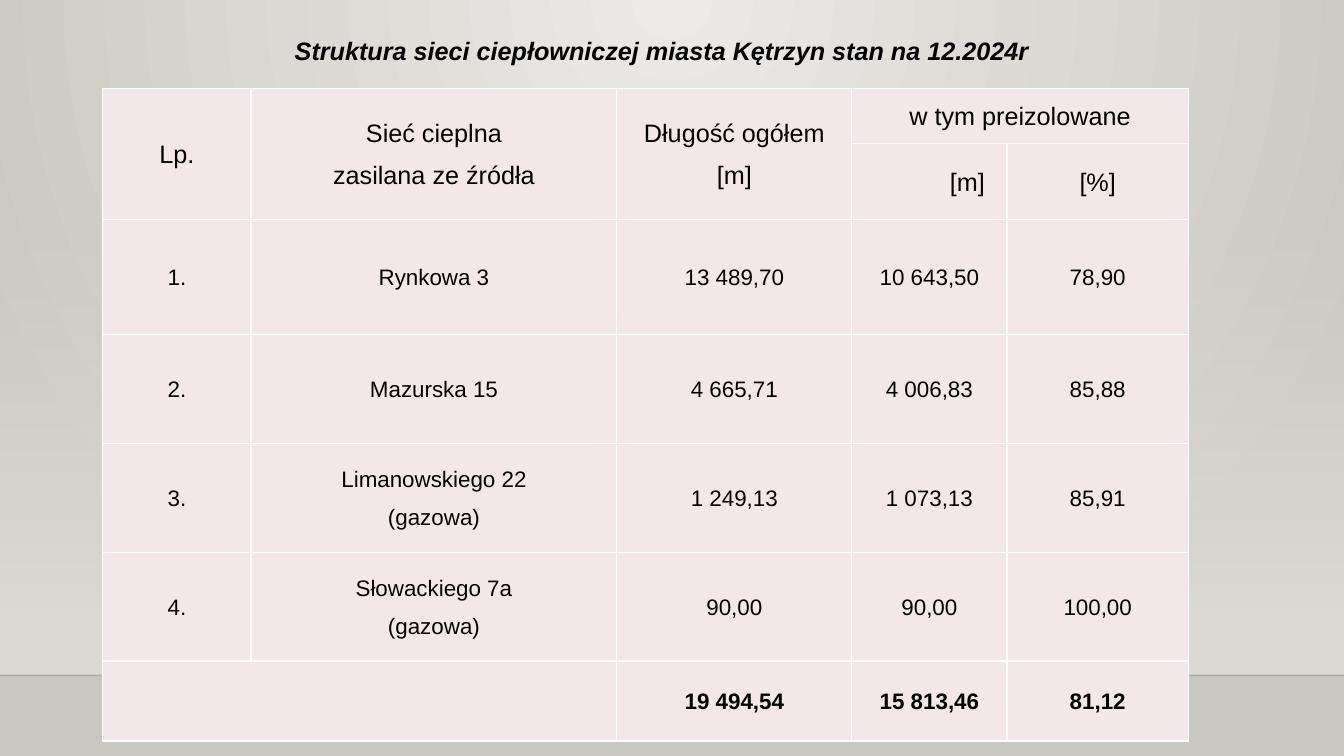
from lxml import etree
from pptx import Presentation
from pptx import util as u
from pptx.dml.color import RGBColor
from pptx.enum import shapes, text
from pptx.oxml import parse_xml
from pptx.oxml.ns import nsdecls, qn

BLACK = RGBColor(0, 0, 0)
WHITE = RGBColor(255, 255, 255)
ROSE = RGBColor(0xF3, 0xE8, 0xE9)
PEARL = RGBColor(0xEC, 0xEA, 0xE7)
STONE = RGBColor(0xCA, 0xC7, 0xC1)
SAND = RGBColor(0xDF, 0xDB, 0xD5)

MID = text.PP_ALIGN.CENTER
CELL = dict(margin_left=u.Inches(0.04), margin_right=u.Inches(0.04),
            margin_top=0, margin_bottom=0, vertical_anchor=text.MSO_ANCHOR.MIDDLE)
PARA = dict(alignment=MID, line_spacing=1.07, space_after=u.Pt(8))
HEAD = dict(name="Arial", size=u.Pt(18), bold=False)
BODY = dict(HEAD, size=u.Pt(16))
TOTAL = dict(BODY, bold=True)
TITLE = dict(HEAD, bold=True, italic=True)

# Shares of the slide's width and height, in percent
COLS = [11.03, 27.22, 17.48, 11.55, 13.5]
ROWS = [7.28, 10.05, 15.21, 14.4, 14.4, 14.4, 10.58]
MERGES = [(0, 0, 1, 0), (0, 1, 1, 1), (0, 2, 1, 2), (0, 3, 0, 4), (6, 0, 6, 1)]
FLOOR = 89.33

NETWORK = [
    ["Lp.", "Sieć cieplna\nzasilana ze źródła", "Długość ogółem\n[m]", "w tym preizolowane", ""],
    ["", "", "", "[m]", "[%]"],
    ["1.", "Rynkowa 3", "13 489,70", "10 643,50", "78,90"],
    ["2.", "Mazurska 15", "4 665,71", "4 006,83", "85,88"],
    ["3.", "Limanowskiego 22\n(gazowa)", "1 249,13", "1 073,13", "85,91"],
    ["4.", "Słowackiego 7a\n(gazowa)", "90,00", "90,00", "100,00"],
    ["", "", "19 494,54", "15 813,46", "81,12"],
]


def apply(item, style):
    for key, value in style.items():
        setattr(item, key, value)


def fade(color, share):
    """Set the opacity of a colour element, in percent."""
    etree.SubElement(color, qn("a:alpha"), val=str(share * 1000))


def blend(fill, first, last):
    fill.gradient()
    for stop, color in zip(fill.gradient_stops, (first, last)):
        stop.color.rgb = color


class Deck:
    def __init__(self):
        self.prs = Presentation()
        self.prs.slide_width, self.prs.slide_height = u.Inches(13.33), u.Inches(7.5)
        self.slide = self.prs.slides.add_slide(self.prs.slide_layouts[5])
        self.shapes = self.slide.shapes

    def wide(self, share):
        return round(self.prs.slide_width * share / 100)

    def high(self, share):
        return round(self.prs.slide_height * share / 100)

    def box(self, x, y, w, h):
        return self.wide(x), self.high(y), self.wide(w), self.high(h)

    def label(self, frame, words, font, para=PARA):
        frame.text = words
        for line in frame.paragraphs:
            apply(line, para)
            apply(line.font, font)
            line.font.color.rgb = BLACK

    def backdrop(self):
        """Radial glow that spreads from the top centre."""
        fill = self.slide.background.fill
        blend(fill, PEARL, STONE)
        lin = self.slide.element.find(".//" + qn("a:lin"))
        lin.getparent().replace(lin, parse_xml(
            f'<a:path {nsdecls("a")} path="circle">'
            '<a:fillToRect l="43000" t="0" r="43000" b="100000"/></a:path>'))

    def wall(self, *place):
        """Haze that thickens down to the floor."""
        wall = self.shapes.add_shape(shapes.MSO_SHAPE.RECTANGLE, *self.box(*place))
        wall.shadow.inherit = False
        wall.line.fill.background()
        blend(wall.fill, SAND, SAND)
        wall.fill.gradient_angle = 270
        fade(wall.element.find(".//" + qn("a:srgbClr")), 0)

    def rule(self, y):
        edge = self.high(y)
        line = self.shapes.add_connector(
            shapes.MSO_CONNECTOR.STRAIGHT, 0, edge, self.prs.slide_width, edge)
        line.line.width = u.Pt(1)
        line.line.color.rgb = BLACK
        fade(line.element.find(".//" + qn("a:srgbClr")), 20)
        etree.SubElement(line.element.spPr, qn("a:effectLst"))

    def title(self, words, *place):
        title = self.shapes.title
        apply(title, dict(zip(("left", "top", "width", "height"), self.box(*place))))
        frame = title.text_frame
        self.label(frame, words, TITLE, dict(alignment=MID))
        apply(frame, dict(word_wrap=True, auto_size=text.MSO_AUTO_SIZE.NONE,
                          vertical_anchor=text.MSO_ANCHOR.MIDDLE))

    def border(self, cell):
        for side in "LRTB":
            cell._tc.get_or_add_tcPr().append(parse_xml(
                f'<a:ln{side} {nsdecls("a")} w="{u.Pt(1)}"><a:solidFill>'
                f'<a:srgbClr val="{WHITE}"/></a:solidFill></a:ln{side}>'))

    def table(self, x, y, data):
        place = self.box(x, y, sum(COLS), sum(ROWS))
        table = self.shapes.add_table(len(ROWS), len(COLS), *place).table
        apply(table, dict(first_row=False, horz_banding=False))
        for col, share in zip(table.columns, COLS):
            col.width = self.wide(share)
        for row, share in zip(table.rows, ROWS):
            row.height = self.high(share)
        for r, line in enumerate(data):
            font = HEAD if r < 2 else TOTAL if r == len(data) - 1 else BODY
            for c, words in enumerate(line):
                cell = table.cell(r, c)
                apply(cell, CELL)
                self.border(cell)
                cell.fill.solid()
                cell.fill.fore_color.rgb = ROSE
                self.label(cell.text_frame, words, font)
        for top, left, low, right in MERGES:
            table.cell(top, left).merge(table.cell(low, right))
        meters = table.cell(1, 3)
        meters.margin_right = u.Inches(0.22)
        meters.text_frame.paragraphs[0].alignment = text.PP_ALIGN.RIGHT


def main():
    deck = Deck()
    deck.backdrop()
    deck.wall(0, 29.47, 100, FLOOR - 29.47)
    deck.rule(FLOOR)
    deck.title("Struktura sieci ciepłowniczej miasta Kętrzyn stan na 12.2024r",
               3.6, 4, 91.28, 5.33)
    deck.table(7.65, 11.7, NETWORK)
    deck.prs.save("out.pptx")


if __name__ == "__main__":
    main()
